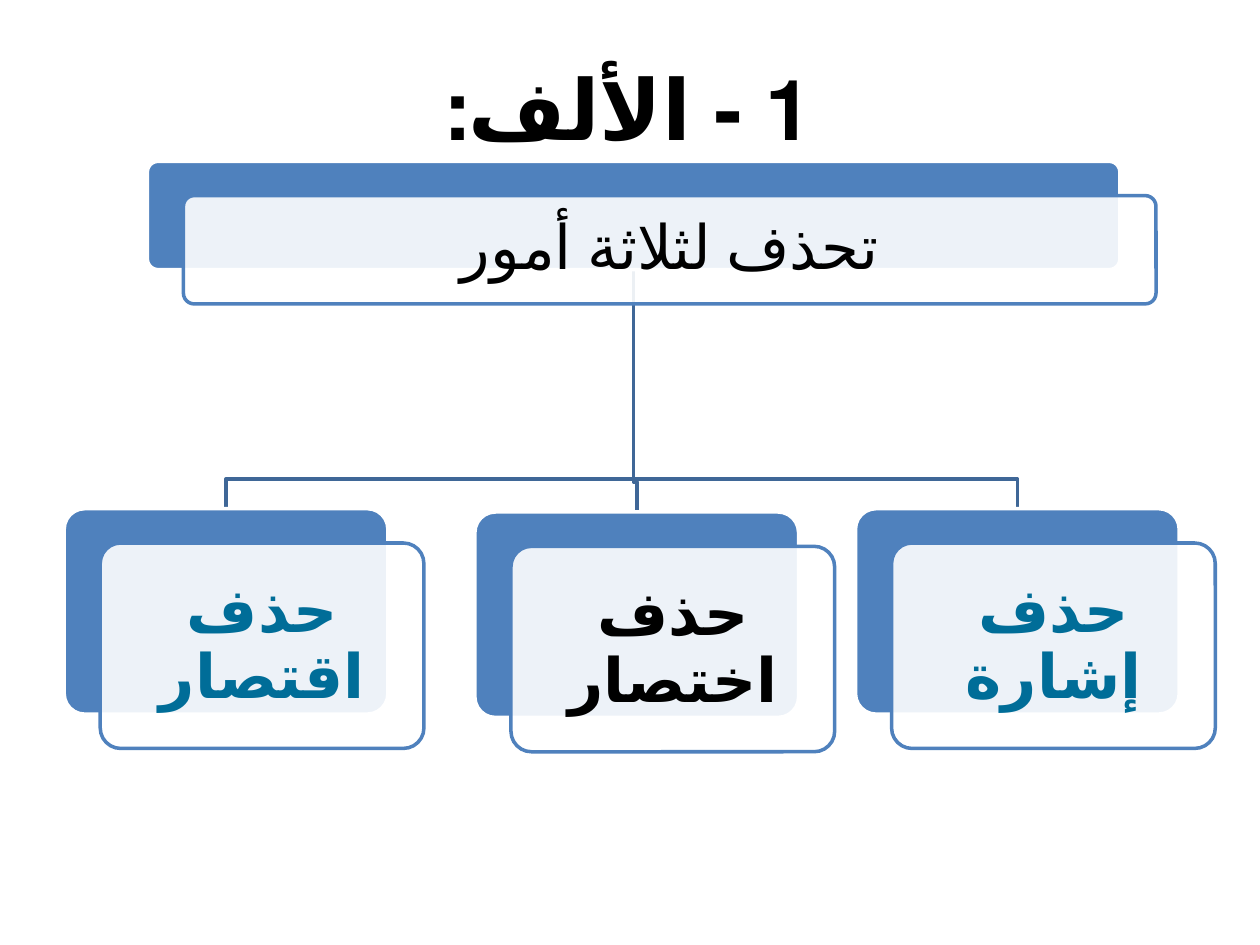
from lxml import etree
from pptx import Presentation
from pptx.dml.color import RGBColor
from pptx.enum.shapes import MSO_SHAPE
from pptx.enum.text import MSO_ANCHOR, PP_ALIGN
from pptx.oxml.ns import qn
from pptx.util import Pt

BLUE, WHITE, BLACK, TEAL = "4F81BD", "FFFFFF", "000000", "006D98"
SHIFT_X, SHIFT_Y = 20.6, 19.6
DROP = 17


def paint(color, value):
    color.rgb = RGBColor.from_string(value)


def write(frame, text, size, font, color, bold):
    frame.text = text
    frame.word_wrap = True
    frame.vertical_anchor = MSO_ANCHOR.MIDDLE
    par = frame.paragraphs[0]
    par.alignment = PP_ALIGN.CENTER
    par._p.get_or_add_pPr().set("rtl", "1")
    run = par.runs[0]
    run.font.size = Pt(size)
    run.font.name = font
    run.font.bold = bold
    paint(run.font.color, color)
    props = run._r.get_or_add_rPr()
    props.set("lang", "ar-SA")
    if font == "Arial":
        etree.SubElement(props, qn("a:cs")).set("typeface", font)
    return par


def add_title(slide, text, left, top, width, height):
    title = slide.shapes.title
    title.left, title.top = Pt(left), Pt(top)
    title.width, title.height = Pt(width), Pt(height)
    write(title.text_frame, text, 48, "Calibri", BLACK, True)


def add_panel(group, box, fill, line):
    panel = group.shapes.add_shape(MSO_SHAPE.ROUNDED_RECTANGLE, *map(Pt, box))
    panel.adjustments[0] = 0.1
    panel.shadow.inherit = False
    panel.fill.solid()
    paint(panel.fill.fore_color, fill)
    panel.line.width = Pt(2)
    paint(panel.line.color, line)
    return panel


def add_card(group, box, text, font, color, bold):
    left, top, width, height = box
    add_panel(group, box, BLUE, WHITE)
    left, top = left + SHIFT_X, top + SHIFT_Y
    front = add_panel(group, (left, top, width, height), WHITE, BLUE)
    tint = front.fill._xPr.find(qn("a:solidFill"))[0]
    etree.SubElement(tint, qn("a:alpha")).set("val", "90000")

    pad = 0.029 * height
    inner = (left + pad, top + pad, width - 2 * pad, height - 2 * pad)
    frame = group.shapes.add_textbox(*map(Pt, inner)).text_frame
    frame.margin_left = frame.margin_right = Pt(10.8)
    frame.margin_top = frame.margin_bottom = Pt(10.8)
    par = write(frame, text, 35, font, color, bold)
    par.line_spacing = 0.9
    par.space_after = Pt(12.25)


def add_branch(group, root, box):
    x, y, width, height = root
    start, base = x + width / 2, y + height
    left, top, width, height = box
    end = left + width / 2
    pen = group.shapes.build_freeform(Pt(start), Pt(base))
    bends = [(start, top - DROP), (end, top - DROP), (end, top)]
    pen.add_line_segments([(Pt(a), Pt(b)) for a, b in bends], close=False)
    branch = pen.convert_to_shape()
    branch.shadow.inherit = False
    branch.fill.background()
    branch.line.width = Pt(2)
    paint(branch.line.color, "3F6797")


def add_tree(slide, left, top):
    group = slide.shapes.add_group_shape()
    root = (left + 47.5, top, 555.8, 61.9)
    leaves = [
        (0, 198.5, "حذف اقتصار", "Arial", TEAL),
        (234.7, 200.4, "حذف اختصار", "Calibri", BLACK),
        (452.2, 198.5, "حذف إشارة", "Arial", TEAL),
    ]
    cards = [((left + x, top + y, 185, 117.4), *rest) for x, y, *rest in leaves]
    for box, *rest in reversed(cards):
        add_branch(group, root, box)
    add_card(group, root, "تحذف لثلاثة أمور", "Calibri", BLACK, False)
    for card in cards:
        add_card(group, *card, True)


def main():
    deck = Presentation()
    deck.slide_width, deck.slide_height = Pt(720), Pt(540)
    slide = deck.slides.add_slide(deck.slide_layouts[5])
    add_title(slide, "1 - الألف:", 36, 21.6, 648, 78.5)
    add_tree(slide, 36.7, 92.2)
    deck.save("out.pptx")


if __name__ == "__main__":
    main()
